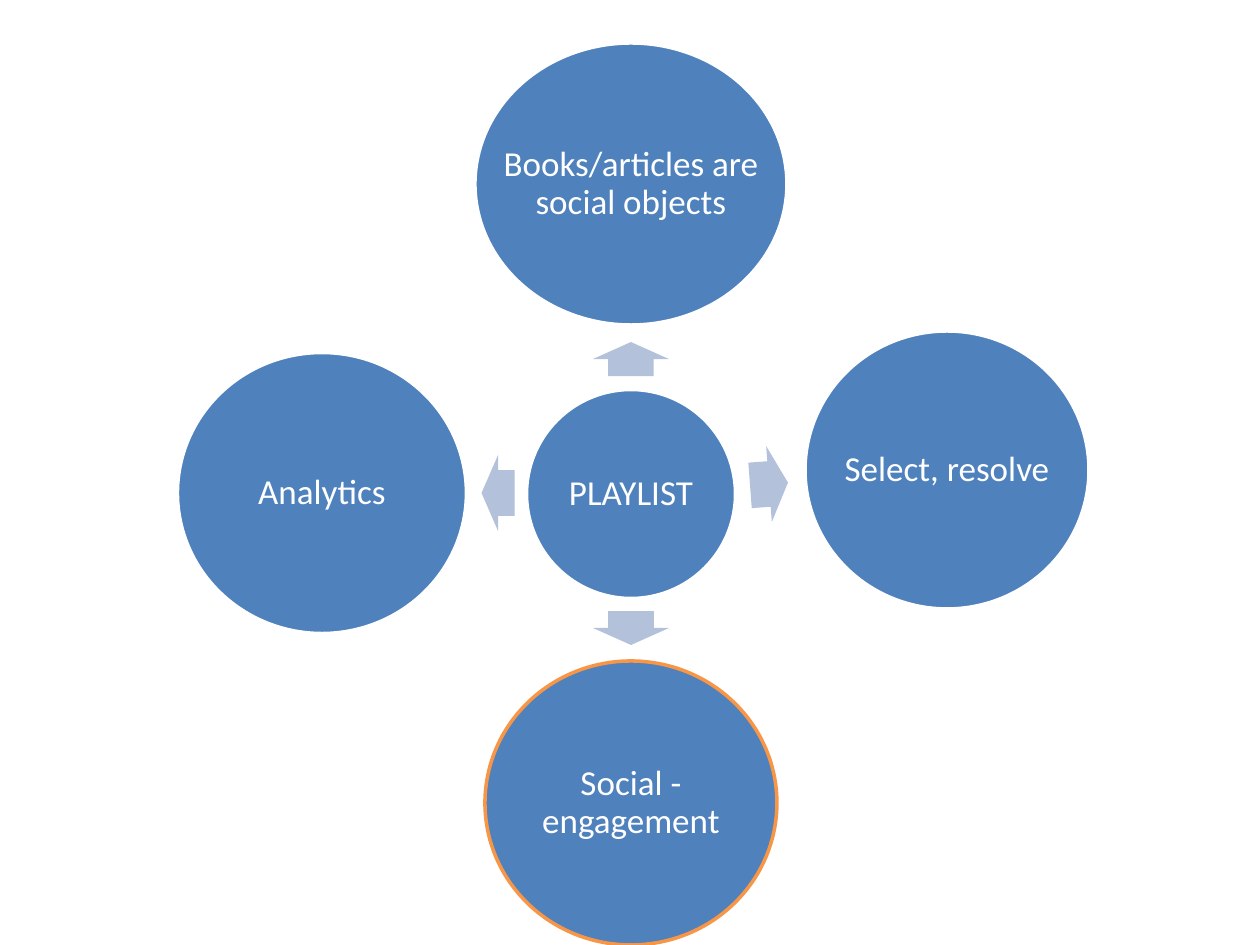
from pptx import Presentation
from pptx.dml.color import RGBColor
from pptx.enum.shapes import MSO_SHAPE
from pptx.enum.text import MSO_ANCHOR, PP_ALIGN
from pptx.util import Pt

PX = 914400 / 126
ELLIPSE, ARROW = MSO_SHAPE.OVAL, MSO_SHAPE.RIGHT_ARROW
MIDDLE, CENTER = MSO_ANCHOR.MIDDLE, PP_ALIGN.CENTER

BLUE = RGBColor(0x4F, 0x81, 0xBD)
PALE_BLUE = RGBColor(0xB3, 0xC1, 0xDB)
ORANGE = RGBColor(0xF7, 0x96, 0x46)
WHITE = RGBColor(0xFF, 0xFF, 0xFF)

ARROW_WIDTH = 76
INSET = 4
FRAME_FORMAT = {"word_wrap": True, "vertical_anchor": MIDDLE,
                "margin_left": round(INSET * PX), "margin_right": round(INSET * PX),
                "margin_top": round(INSET * PX), "margin_bottom": round(INSET * PX)}
PARAGRAPH_FORMAT = {"alignment": CENTER, "line_spacing": 0.9}
FONT_FORMAT = {"name": "Calibri", "size": Pt(20)}

# Centre x, centre y, width, height, label, outline
HUB = (631, 494, 209, 209, "PLAYLIST", WHITE)
# Arrow centre x, centre y, length, rotation, then the circle it points to
SPOKES = [
    ((631, 359, 34, 270), (631, 184, 312, 282, "Books/articles are social objects", WHITE)),
    ((769, 484, 38, 355.7), (947, 470, 284, 278, "Select, resolve", WHITE)),
    ((631, 628, 34, 90), (631, 803, 292, 284, "Social - engagement", ORANGE)),
    ((498, 493, 33, 180), (322, 493, 289, 281, "Analytics", WHITE)),
]


def set_all(target, values):
    for name, value in values.items():
        setattr(target, name, value)


def centred_box(cx, cy, w, h):
    return [round(v * PX) for v in (cx - w / 2, cy - h / 2, w, h)]


def add_filled(s, kind, box, color):
    sp = s.shapes.add_shape(kind, *box)
    sp.shadow.inherit = False
    sp.fill.solid()
    sp.fill.fore_color.rgb = color
    return sp


def add_label(s, box, text):
    tf = s.shapes.add_textbox(*box).text_frame
    set_all(tf, FRAME_FORMAT)
    p = tf.paragraphs[0]
    set_all(p, PARAGRAPH_FORMAT)
    r = p.add_run()
    r.text = text
    set_all(r.font, FONT_FORMAT)
    r.font.color.rgb = WHITE


def add_circle(s, cx, cy, w, h, text, outline):
    box = centred_box(cx, cy, w, h)
    sp = add_filled(s, ELLIPSE, box, BLUE)
    sp.line.color.rgb = outline
    sp.line.width = Pt(2)
    # The label uses the full width of the circle, not its inner rectangle
    add_label(s, box, text)


def add_arrow(s, cx, cy, length, rotation):
    sp = add_filled(s, ARROW, centred_box(cx, cy, length, ARROW_WIDTH), PALE_BLUE)
    sp.line.fill.background()
    sp.adjustments[0] = 0.6
    sp.adjustments[1] = 0.5
    sp.rotation = rotation


def main():
    prs = Presentation()
    prs.slide_width, prs.slide_height = round(1260 * PX), round(945 * PX)
    s = prs.slides.add_slide(prs.slide_layouts[6])

    # Hub, then each arrow with its circle
    add_circle(s, *HUB)
    for arrow, circle in SPOKES:
        add_arrow(s, *arrow)
        add_circle(s, *circle)

    prs.save("out.pptx")


if __name__ == "__main__":
    main()
